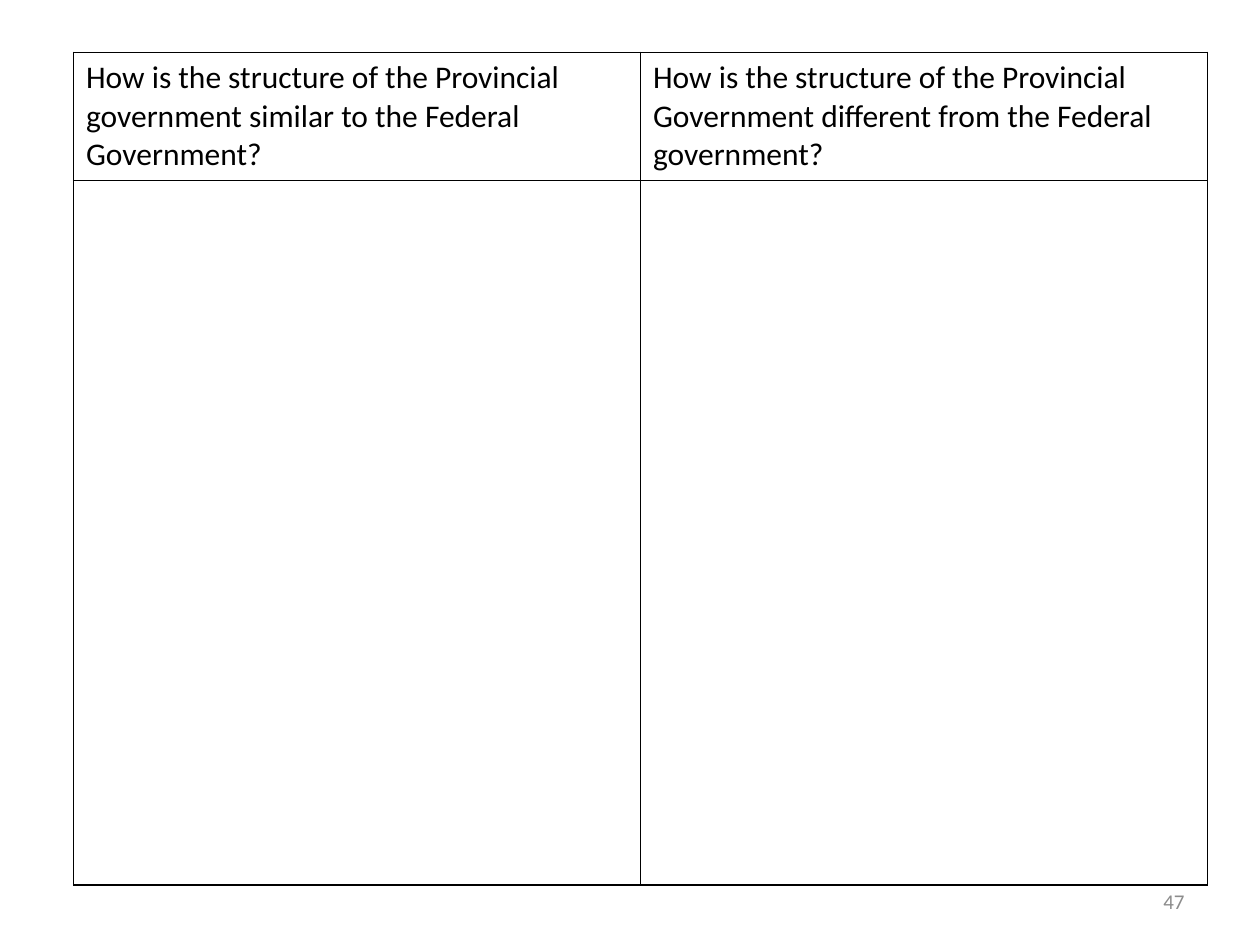
"""Build a two-column comparison table of provincial and federal government."""
from dataclasses import dataclass

from lxml import etree
from pptx import Presentation
from pptx.dml.color import RGBColor
from pptx.enum import text
from pptx.oxml import ns
from pptx.util import Pt


@dataclass
class Column:
    question: str
    answer: str = ""


COLUMNS = [
    Column("How is the structure of the Provincial government similar to the Federal Government?"),
    Column("How is the structure of the Provincial Government different from the Federal government?"),
]
COLUMN_WIDTH = 324
ROW_HEIGHTS = (73.2, 402.6)
INK = "000000"
MUTED = "8C8C8C"


def color(value: str) -> RGBColor:
    return RGBColor.from_string(value)


def format_font(font, size: float, ink: str) -> None:
    for name, value in {"name": "Calibri", "size": Pt(size), "bold": False}.items():
        setattr(font, name, value)
    font.color.rgb = color(ink)


def add_borders(cell, ink: str, width: float) -> None:
    properties = cell._tc.get_or_add_tcPr()
    for position, side in enumerate(("lnL", "lnR", "lnT", "lnB")):
        line = etree.Element(ns.qn(f"a:{side}"), w=str(Pt(width)))
        fill = etree.SubElement(line, ns.qn("a:solidFill"))
        etree.SubElement(fill, ns.qn("a:srgbClr"), val=ink)
        properties.insert(position, line)


def fill_cell(cell, wording: str) -> None:
    cell.text = wording
    cell.fill.background()
    format_font(cell.text_frame.paragraphs[0].font, 18, INK)
    for run in cell.text_frame.paragraphs[0].runs:
        format_font(run.font, 18, INK)
    add_borders(cell, INK, 1)


def add_comparison(slide, columns: list[Column]) -> None:
    frame = slide.shapes.add_table(
        len(ROW_HEIGHTS), len(columns), Pt(42), Pt(30),
        Pt(COLUMN_WIDTH * len(columns)), Pt(sum(ROW_HEIGHTS)))
    comparison = frame.table
    for flag in ("first_row", "horz_banding"):
        setattr(comparison, flag, False)
    for row, height in zip(comparison.rows, ROW_HEIGHTS):
        row.height = Pt(height)
    for index, column in enumerate(columns):
        comparison.columns[index].width = Pt(COLUMN_WIDTH)
        for row, wording in enumerate((column.question, column.answer)):
            fill_cell(comparison.cell(row, index), wording)


def add_page_number(slide, number: str) -> None:
    frame = slide.shapes.add_textbox(Pt(516), Pt(500.5), Pt(168), Pt(28.75)).text_frame
    frame.word_wrap = True
    frame.vertical_anchor = text.MSO_ANCHOR.MIDDLE
    paragraph = frame.paragraphs[0]
    paragraph.alignment = text.PP_ALIGN.RIGHT
    run = paragraph.add_run()
    run.text = number
    format_font(run.font, 12, MUTED)


def main() -> None:
    deck = Presentation()
    deck.slide_width, deck.slide_height = Pt(720), Pt(540)
    slide = deck.slides.add_slide(deck.slide_layouts[6])
    add_comparison(slide, COLUMNS)
    add_page_number(slide, "47")
    deck.save("out.pptx")


if __name__ == "__main__":
    main()
